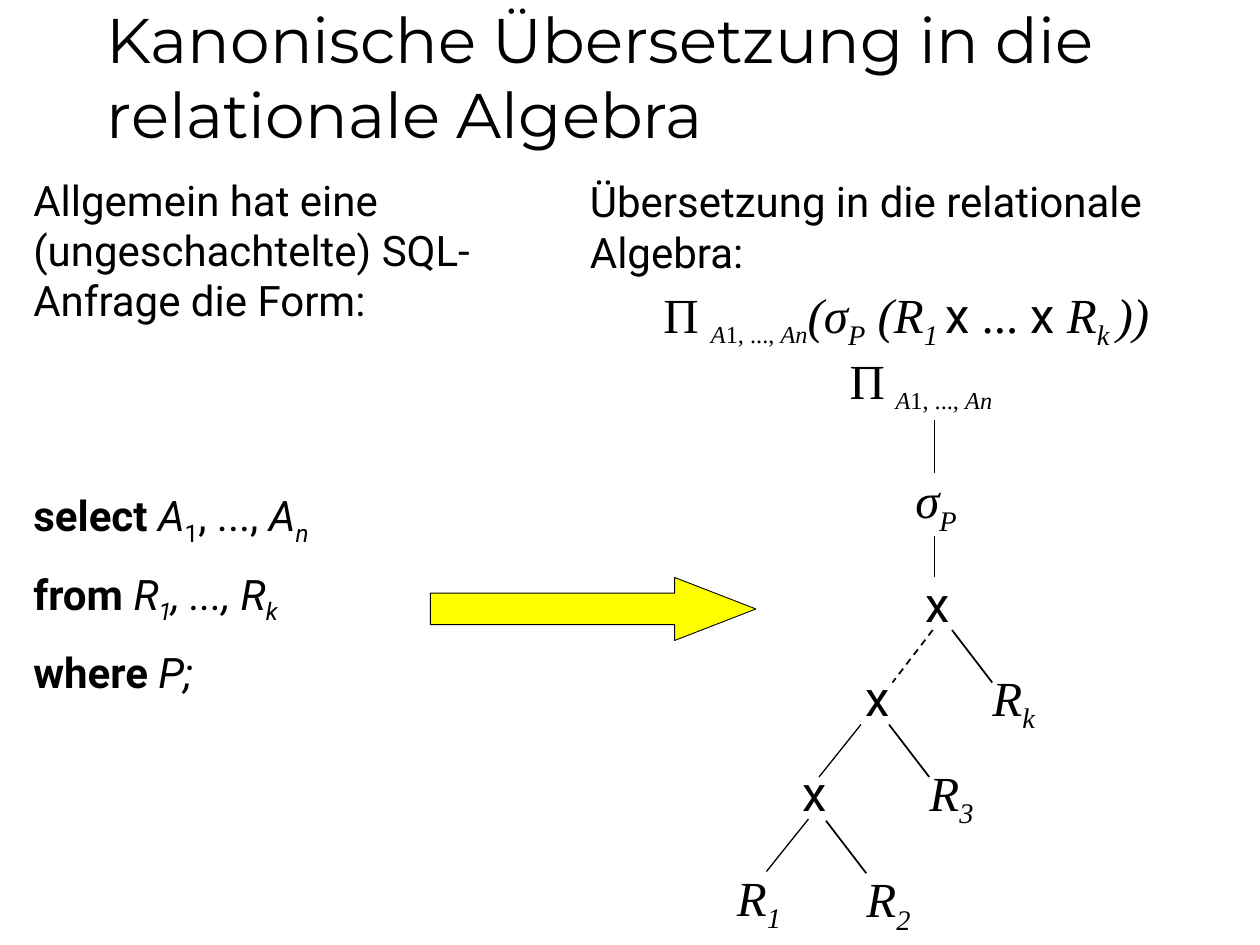
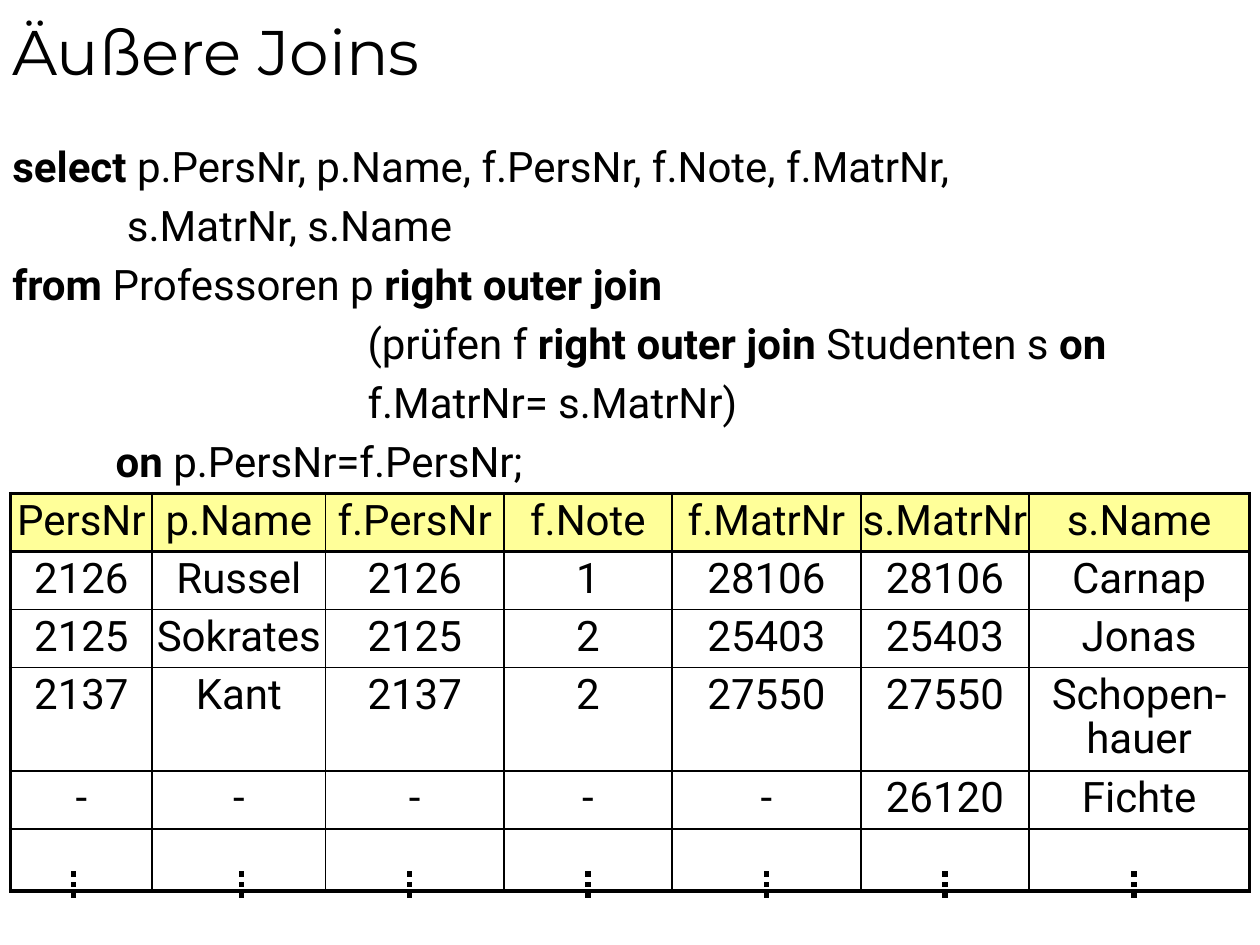
from lxml import etree
from pptx import Presentation
from pptx.dml.color import RGBColor
from pptx.enum.dml import MSO_LINE
from pptx.enum.shapes import MSO_CONNECTOR, MSO_SHAPE
from pptx.enum.text import MSO_ANCHOR, PP_ALIGN
from pptx.oxml.ns import qn
from pptx.util import Pt

LINE, ARROW = MSO_CONNECTOR.STRAIGHT, MSO_SHAPE.RIGHT_ARROW
DASH, DOTS = MSO_LINE.DASH, MSO_LINE.ROUND_DOT
TOP, BOTTOM, CENTER = MSO_ANCHOR.TOP, MSO_ANCHOR.BOTTOM, PP_ALIGN.CENTER

BLACK, YELLOW, PALE = "000000", "FFFF00", "FFFF99"
HEAD, BODY, MATH = "Montserrat", "Roboto", "Times New Roman"
BODY_SIZE, HEAD_SIZE, MATH_SIZE = 24, 36, 28
THIN, THICK = 1, 2.25


def color(code):
    return RGBColor.from_string(code)


class Deck:
    """Holds the style and the current slide."""

    def __init__(self):
        self.prs = Presentation()
        self.prs.slide_width, self.prs.slide_height = Pt(720), Pt(540)

    def page(self):
        self.slide = self.prs.slides.add_slide(self.prs.slide_layouts[6])

    def run(self, para, text, flags="", size=BODY_SIZE, face=BODY):
        """Flags: b bold, i italic, s subscript, t math face, m body size."""
        run = para.add_run()
        run.text = text
        font = run.font
        font.name = MATH if "t" in flags else face
        font.size = Pt(BODY_SIZE if "m" in flags else size)
        font.bold, font.italic = "b" in flags, "i" in flags
        font.color.rgb = color(BLACK)
        if "s" in flags:
            run._r.get_or_add_rPr().set("baseline", "-25000")

    def text(self, box, paras, size=BODY_SIZE, face=BODY, anchor=TOP):
        """Each paragraph is (space before, left indent, runs)."""
        frame = self.slide.shapes.add_textbox(*map(Pt, box)).text_frame
        frame.word_wrap, frame.vertical_anchor = True, anchor
        for i, (gap, indent, runs) in enumerate(paras):
            para = frame.add_paragraph() if i else frame.paragraphs[0]
            para.space_before = Pt(gap)
            if indent:
                para._p.get_or_add_pPr().set("marL", str(Pt(indent)))
            for run in runs:
                self.run(para, *run, size=size, face=face)

    def title(self, box, text):
        self.text(box, [(0, 0, [(text,)])], HEAD_SIZE, HEAD, BOTTOM)

    def math(self, left, top, runs, width=60):
        self.text((left, top, width, 41), [(0, 0, runs)], MATH_SIZE)

    def line(self, x1, y1, x2, y2, width=THIN, dash=None):
        line = self.slide.shapes.add_connector(LINE, *map(Pt, (x1, y1, x2, y2)))
        line.line.color.rgb = color(BLACK)
        line.line.width = Pt(width)
        if dash:
            line.line.dash_style = dash
        etree.SubElement(line._element.spPr, qn("a:effectLst"))

    def arrow(self, box, adjust):
        arrow = self.slide.shapes.add_shape(ARROW, *map(Pt, box))
        arrow.shadow.inherit = False
        arrow.adjustments[0], arrow.adjustments[1] = adjust
        arrow.fill.solid()
        arrow.fill.fore_color.rgb = color(YELLOW)
        arrow.line.color.rgb = color(BLACK)
        arrow.line.width = Pt(0.5)

    def border(self, cell, **widths):
        props = cell._tc.get_or_add_tcPr()
        for side, width in widths.items():
            edge = etree.SubElement(props, qn("a:ln" + side), w=str(Pt(width)))
            fill = etree.SubElement(edge, qn("a:solidFill"))
            etree.SubElement(fill, qn("a:srgbClr"), val=BLACK)

    def table(self, left, top, cols, heights, rows):
        box = map(Pt, (left, top, sum(cols), sum(heights)))
        table = self.slide.shapes.add_table(len(rows), len(cols), *box).table
        table.first_row = table.horz_banding = False
        for col, width in zip(table.columns, cols):
            col.width = Pt(width)
        for row, height in zip(table.rows, heights):
            row.height = Pt(height)
        end, last = len(rows) - 1, len(cols) - 1
        for r, row in enumerate(rows):
            for c, text in enumerate(row):
                cell = table.cell(r, c)
                cell.margin_left = cell.margin_right = 0
                cell.margin_top = cell.margin_bottom = Pt(3.6)
                self.border(cell,
                            L=THICK if c == 0 else THIN,
                            R=THICK if c == last else THIN,
                            T=THICK if r < 2 else THIN,
                            B=THICK if r in (0, end) else THIN)
                if r == 0:
                    cell.fill.solid()
                    cell.fill.fore_color.rgb = color(PALE)
                else:
                    cell.fill.background()
                if text:
                    para = cell.text_frame.paragraphs[0]
                    para.alignment, para.line_spacing = CENTER, 0.9
                    self.run(para, text)


def algebra(deck):
    deck.page()
    deck.title((54, 0, 612, 90),
               "Kanonische Übersetzung in die relationale Algebra")

    # General query form
    deck.text((12, 96, 330, 352), [
        (0, 0, [("Allgemein hat eine (ungeschachtelte) SQL-Anfrage die Form:",)]),
        (94, 0, [("select ", "b"), ("A", "i"), ("1", "s"), (", ..., ",),
                 ("A", "i"), ("n", "is")]),
        (12, 0, [("from ", "b"), ("R", "i"), ("1", "is"), (", ..., R", "i"),
                 ("k", "is")]),
        (12, 0, [("where", "b"), (" P;", "i")]),
    ])
    deck.arrow((246, 330, 186, 36), (0.5, 1.29))

    # Translated expression
    deck.text((330, 97, 390, 65),
              [(0, 0, [("Übersetzung in die relationale Algebra:",)])])
    names = [("A", "tims"), ("1, ..., ", "tms"), ("An", "tims")]
    select = [("σ", "ti"), ("P", "tis")]
    deck.math(372, 159, [
        ("Π ", "t"), *names, ("(", "ti"), *select,
        (" (R", "ti"), ("1 ", "tis"), ("x",), (" ... ", "t"), ("x ",),
        ("R", "ti"), ("k ", "tis"), ("))", "ti")], 336)

    # Operator tree
    deck.math(478.5, 196.5, [("Π", "t"), (" ", "tim"), *names], 125)
    deck.math(516, 265, select)
    for left, top in ((522, 324), (487.5, 378), (451.5, 432)):
        deck.math(left, top, [("x",)], 29)
    for left, top, index in ((560, 378, "k"), (524, 432, "3"),
                             (488, 493, "2"), (414, 492, "1")):
        deck.math(left, top, [("R", "ti"), (index, "tis")])
    for edge in ((534, 240, 534, 270), (534, 306, 534, 330, 0.75),
                 (533, 360, 510, 390, THIN, DASH), (544, 360, 567, 390),
                 (492, 414, 468, 444, 0.75), (508, 414, 531, 444),
                 (462, 468, 438, 498, 0.75), (472, 469, 495, 499)):
        deck.line(*edge)


def joins(deck):
    deck.page()
    deck.title((0, 0, 720, 54), "Äußere Joins")

    # Query
    gap = 5
    deck.text((0, 76.5, 720, 277), [
        (0, 0, [("select", "b"),
                (" p.PersNr, p.Name, f.PersNr, f.Note, f.MatrNr,",)]),
        (gap, 65.5, [("s.MatrNr, s.Name",)]),
        (gap, 0, [("from", "b"), (" Professoren p ",),
                  ("right outer join", "b")]),
        (gap, 203, [("(prüfen f",), (" right outer join ", "b"),
                    ("Studenten s ",), ("on", "b")]),
        (gap, 203, [("f.MatrNr= s.MatrNr)",)]),
        (gap, 59, [("on", "b"), (" p.PersNr=f.PersNr;",)]),
    ])

    # Result
    cols = (81, 99, 102, 96, 108, 96, 126)
    deck.table(6, 282, cols, (33, 33, 33, 59, 33, 35.5), [
        ("PersNr", "p.Name", "f.PersNr", "f.Note", "f.MatrNr", "s.MatrNr",
         "s.Name"),
        ("2126", "Russel", "2126", "1", "28106", "28106", "Carnap"),
        ("2125", "Sokrates", "2125", "2", "25403", "25403", "Jonas"),
        ("2137", "Kant", "2137", "2", "27550", "27550", "Schopen-hauer"),
        ("-",) * 5 + ("26120", "Fichte"),
        ("",) * len(cols),
    ])

    # Dots for further rows
    for x in (42, 138, 234, 336, 438, 540, 648):
        deck.line(x, 498, x, 516, 3, DOTS)


def main():
    deck = Deck()
    algebra(deck)
    joins(deck)
    deck.prs.save("out.pptx")


if __name__ == "__main__":
    main()
